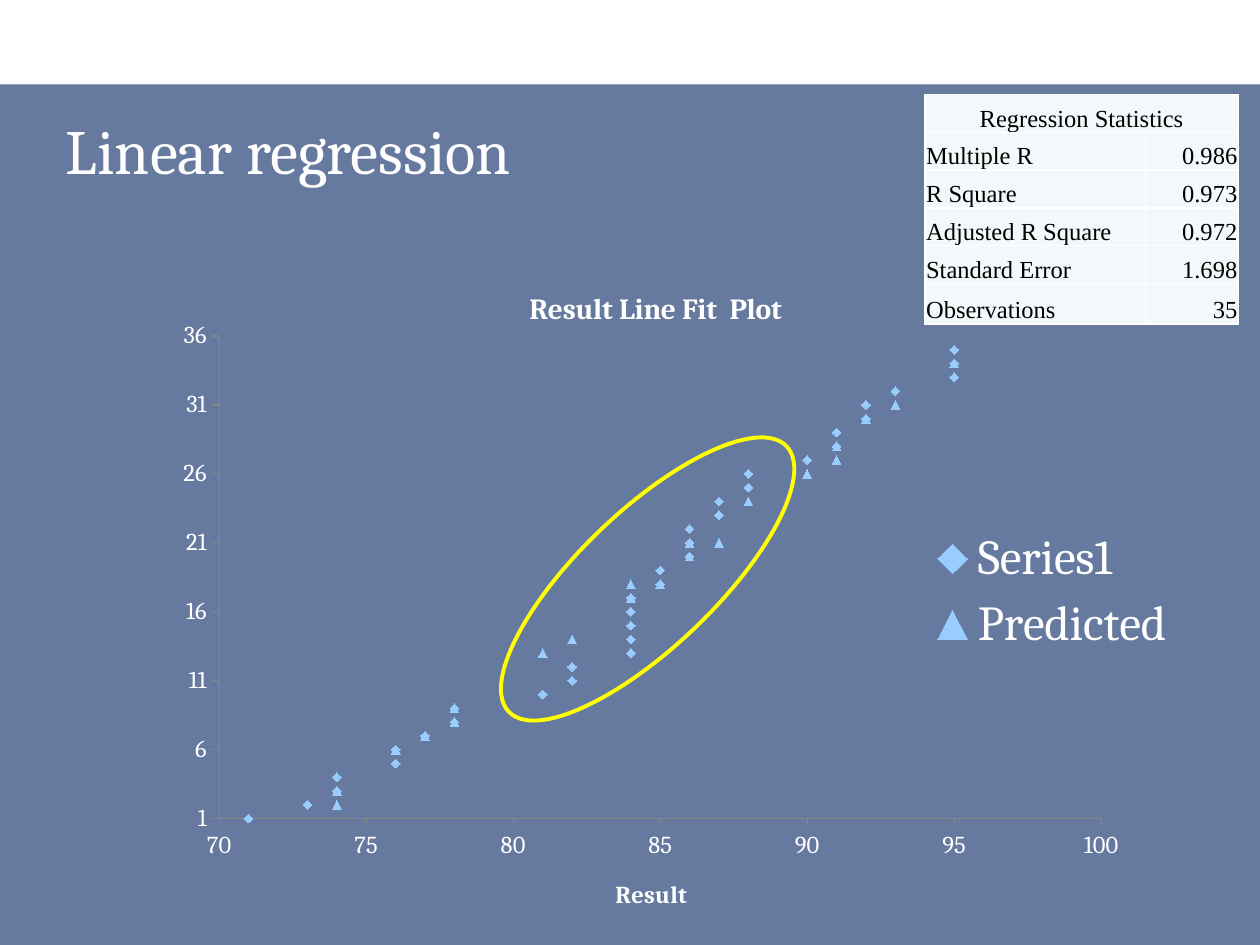
from lxml import etree
from pptx import Presentation
from pptx.chart.data import XyChartData
from pptx.dml.color import RGBColor
from pptx.enum.chart import XL_CHART_TYPE as ChartType
from pptx.enum.chart import XL_LEGEND_POSITION as LegendPosition
from pptx.enum.chart import XL_MARKER_STYLE as MarkerStyle
from pptx.enum.chart import XL_TICK_MARK as TickMark
from pptx.enum.shapes import MSO_SHAPE as Shape
from pptx.enum.text import MSO_ANCHOR as Anchor
from pptx.enum.text import PP_ALIGN as Align
from pptx.oxml import parse_xml
from pptx.oxml.ns import nsdecls, qn
from pptx.util import Inches, Pt

WHITE = RGBColor(0xFF, 0xFF, 0xFF)
BLACK = RGBColor(0, 0, 0)
NAVY = RGBColor(0x00, 0x20, 0x60)
YELLOW = RGBColor(0xFF, 0xFF, 0x00)
SKY = RGBColor(0x99, 0xCC, 0xFF)
GREY = RGBColor(0x86, 0x86, 0x86)
PALE = RGBColor(0xF3, 0xF9, 0xFA)

CHART_WIDTH, CHART_HEIGHT = Inches(8.58), Inches(5.18)


def set_font(font, name, size, color, bold=False):
    font.name, font.size, font.bold = name, Pt(size), bold
    font.color.rgb = color


def set_layout(element, **lengths):
    """Place a chart part by hand, with lengths in inches from the chart's corner."""
    for old in element.findall(qn("c:layout")):
        element.remove(old)
    target = '<c:layoutTarget val="inner"/>' if element.tag == qn("c:plotArea") else ""
    modes = "".join(f'<c:{key}Mode val="edge"/>' for key in ("x", "y"))
    items = ""
    for key, length in lengths.items():
        whole = CHART_WIDTH if key in "xw" else CHART_HEIGHT
        items += f'<c:{key} val="{Inches(length) / whole:.4f}"/>'
    layout = parse_xml(f'<c:layout {nsdecls("c")}><c:manualLayout>{target}{modes}{items}'
                       "</c:manualLayout></c:layout>")
    before = element.find(qn("c:tx"))
    if before is None:
        before = element.find(qn("c:legendPos"))
    if before is None:
        element.insert(0, layout)
    else:
        before.addnext(layout)


presentation = Presentation()
presentation.slide_width, presentation.slide_height = Inches(10), Inches(7.5)
slide = presentation.slides.add_slide(presentation.slide_layouts[6])

# Translucent panel
panel = slide.shapes.add_shape(Shape.RECTANGLE, 0, Inches(0.67), Inches(10), Inches(6.83))
panel.shadow.inherit = False
panel.fill.solid()
panel.fill.fore_color.rgb = NAVY
panel.line.fill.background()
panel_color = panel.fill._xPr.find(".//" + qn("a:srgbClr"))
etree.SubElement(panel_color, qn("a:alpha"), val="60000")

# Scatter chart: results in rank order, with the fitted line
results = [71, 73, 74, 74, 76, 76, 77, 78, 78, 81, 82, 82, 84, 84, 84, 84, 84, 85,
           85, 86, 86, 86, 87, 87, 88, 88, 90, 91, 91, 92, 92, 93, 95, 95, 95]
fits = [-2, 0, 2, 3, 6, 6, 7, 8, 9, 13, 14, 14, 17, 17, 17, 17, 18, 18,
        18, 20, 20, 21, 21, 21, 24, 24, 26, 27, 28, 30, 30, 31, 34, 34, 34]
chart_data = XyChartData()
ranks = chart_data.add_series("Series1")
predicted = chart_data.add_series("Predicted")
for rank, (result, fit) in enumerate(zip(results, fits), start=1):
    ranks.add_data_point(result, rank)
    predicted.add_data_point(result, fit)

chart = slide.shapes.add_chart(ChartType.XY_SCATTER, Inches(0.92), Inches(2.1),
                               CHART_WIDTH, CHART_HEIGHT, chart_data).chart
set_font(chart.font, "Cambria", 14, WHITE)
plot = chart.plots[0]
plot.vary_by_categories = False
for series, marker_style in zip(plot.series, (MarkerStyle.DIAMOND, MarkerStyle.TRIANGLE)):
    series.smooth = False
    series.format.line.fill.background()
    series.marker.style = marker_style
    series.marker.size = 5
    series.marker.format.fill.solid()
    series.marker.format.fill.fore_color.rgb = SKY
    series.marker.format.line.color.rgb = SKY

axis_formats = (
    (chart.category_axis, {"minimum_scale": 70, "maximum_scale": 100}),
    (chart.value_axis, {"minimum_scale": 1, "maximum_scale": 36}),
)
for axis, limits in axis_formats:
    common = {"major_unit": 5, "has_major_gridlines": False,
              "major_tick_mark": TickMark.OUTSIDE, "minor_tick_mark": TickMark.NONE}
    for name, value in {**limits, **common}.items():
        setattr(axis, name, value)
    axis.tick_labels.number_format = "General"
    axis.tick_labels.number_format_is_linked = False
    set_font(axis.tick_labels.font, "Cambria", 14, WHITE)
    axis.format.line.color.rgb = GREY
    axis.format.line.width = Pt(0.75)

titles = (
    (chart.chart_title, "Result Line Fit  Plot", 16.8, {"x": 3.24, "y": 0.16}),
    (chart.category_axis.axis_title, "Result", 14, {"x": 3.93, "y": 4.86}),
)
for title, text, size, place in titles:
    title.text_frame.text = text
    set_font(title.text_frame.paragraphs[0].runs[0].font, "Cambria", size, WHITE, True)
    set_layout(title._element, **place)

chart.has_legend = True
chart.legend.position = LegendPosition.RIGHT
chart.legend.include_in_layout = False
set_font(chart.legend.font, "Cambria", 28, WHITE)
set_layout(chart.legend._element, x=6.4, y=2.04, w=2.06, h=1.14)
set_layout(chart._chartSpace.chart.plotArea, x=0.82, y=0.57, w=7, h=3.85)

# Slide title
title_box = slide.shapes.add_textbox(Inches(0.25), Inches(0.77), Inches(4.08), Inches(0.83))
title_frame = title_box.text_frame
title_frame.word_wrap = True
title_frame.vertical_anchor = Anchor.MIDDLE
title_frame.text = "Linear regression"
title_frame.paragraphs[0].alignment = Align.CENTER
set_font(title_frame.paragraphs[0].runs[0].font, "Cambria", 36, WHITE)

# Ring around the middle of the range
ring = slide.shapes.add_shape(Shape.OVAL, Inches(4.6), Inches(3.07), Inches(1.08), Inches(3.05))
ring.rotation = 46.3
ring.shadow.inherit = False
ring.fill.background()
ring.line.color.rgb = YELLOW
ring.line.width = Pt(2.25)

# Regression statistics
statistics = [
    ("Regression Statistics",),
    ("Multiple R", "0.986"),
    ("R Square", "0.973"),
    ("Adjusted R Square", "0.972"),
    ("Standard Error", "1.698"),
    ("Observations", "35"),
]
table = slide.shapes.add_table(len(statistics), 2, Inches(7.34), Inches(0.75),
                               Inches(2.49), Inches(1.82)).table
table.first_row = table.horz_banding = False
table.columns[0].width, table.columns[1].width = Inches(1.75), Inches(0.74)
table.cell(0, 0).merge(table.cell(0, 1))
cell_format = {"vertical_anchor": Anchor.BOTTOM, "margin_left": Inches(0.01),
               "margin_right": Inches(0.01), "margin_top": Inches(0.01), "margin_bottom": 0}
for row, texts in enumerate(statistics):
    table.rows[row].height = Inches(0.32 if row == len(statistics) - 1 else 0.3)
    for column, text in enumerate(texts):
        cell = table.cell(row, column)
        for name, value in cell_format.items():
            setattr(cell, name, value)
        cell.text_frame.text = text
        paragraph = cell.text_frame.paragraphs[0]
        paragraph.alignment = Align.CENTER if row == 0 else (Align.LEFT, Align.RIGHT)[column]
        set_font(paragraph.runs[0].font, "Times New Roman", 14, BLACK)
        properties = cell._tc.get_or_add_tcPr()
        for side in ("lnL", "lnR", "lnT", "lnB"):
            properties.append(parse_xml(
                f'<a:{side} {nsdecls("a")} w="12700"><a:solidFill>'
                f'<a:srgbClr val="{WHITE}"/></a:solidFill></a:{side}>'))
        cell.fill.solid()
        cell.fill.fore_color.rgb = PALE

presentation.save("out.pptx")
